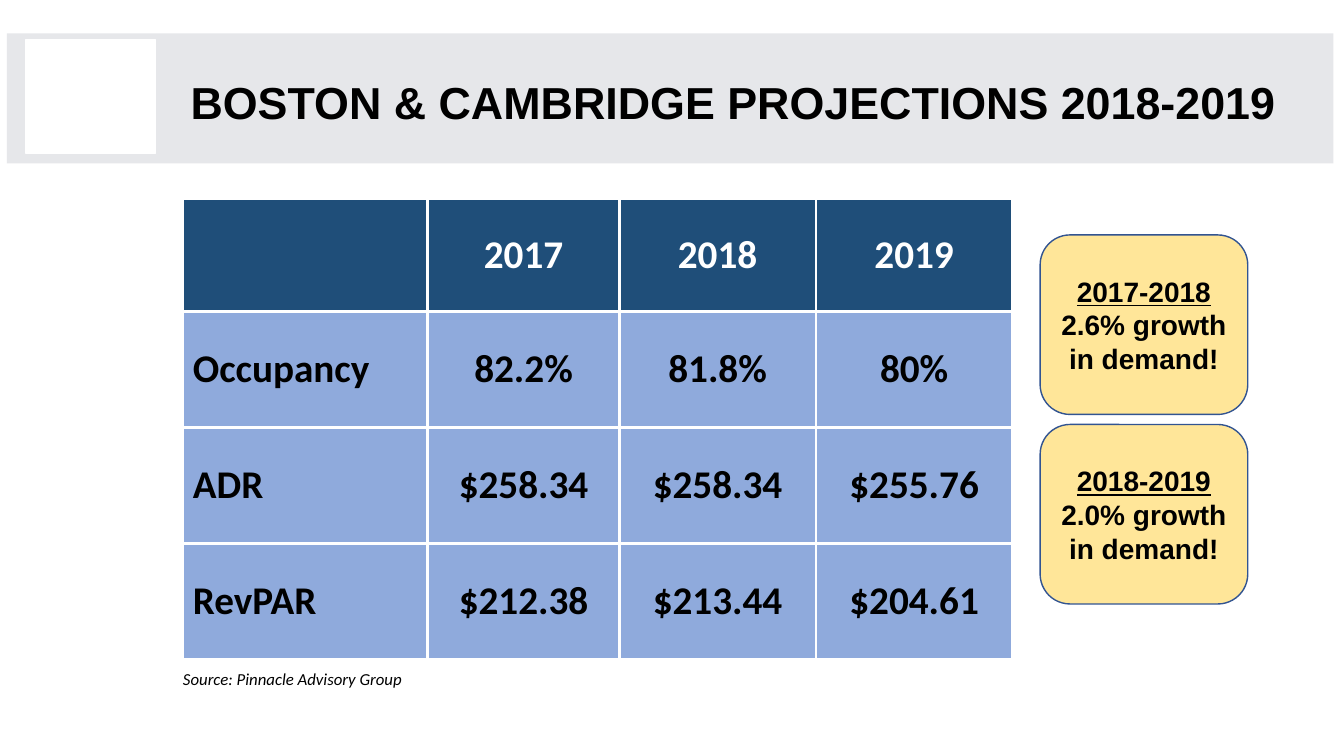
import pptx
import pptx.util
import pptx.dml.color
import pptx.enum.shapes
import pptx.enum.text
from lxml import etree

Pt = pptx.util.Pt
Shape = pptx.enum.shapes.MSO_SHAPE
Align = pptx.enum.text.PP_ALIGN
Anchor = pptx.enum.text.MSO_ANCHOR
NS = "http://schemas.openxmlformats.org/drawingml/2006/main"

TITLE = "BOSTON & CAMBRIDGE PROJECTIONS 2018-2019"
ROWS = [
    ("", "2017", "2018", "2019"),
    ("Occupancy", "82.2%", "81.8%", "80%"),
    ("ADR", "$258.34", "$258.34", "$255.76"),
    ("RevPAR", "$212.38", "$213.44", "$204.61"),
]
NOTES = [
    ("2017-2018", "2.6% growth in demand!"),
    ("2018-2019", "2.0% growth in demand!"),
]
SOURCE = "Source: Pinnacle Advisory Group"
WIDTHS = [175, 136.8, 140.4, 140.4]
HEIGHTS = [80.6, 82.8, 82.8, 82.8]


def color(code):
    return pptx.dml.color.RGBColor.from_string(code)


def style(para, size, name, code="000000", bold=True, align=Align.LEFT):
    para.alignment = align
    font = para.font
    font.size, font.name, font.bold = Pt(size), name, bold
    font.color.rgb = color(code)


def block(kind, box, fill, line=None):
    shape = slide.shapes.add_shape(kind, *map(Pt, box))
    shape.shadow.inherit = False
    shape.fill.solid()
    shape.fill.fore_color.rgb = color(fill)
    if line:
        shape.line.color.rgb = color(line)
        shape.line.width = Pt(1)
    else:
        shape.line.fill.background()
    return shape


def border(cell):
    props = cell._tc.get_or_add_tcPr()
    for spot, side in enumerate(("lnL", "lnR", "lnT", "lnB")):
        line = etree.Element(f"{{{NS}}}{side}", w=str(Pt(2.25)))
        fill = etree.SubElement(line, f"{{{NS}}}solidFill")
        etree.SubElement(fill, f"{{{NS}}}srgbClr", val="FFFFFF")
        props.insert(spot, line)


deck = pptx.Presentation()
deck.slide_width, deck.slide_height = Pt(960), Pt(540)
slide = deck.slides.add_slide(deck.slide_layouts[5])

block(Shape.RECTANGLE, (5, 23.8, 947.5, 92.9), "E6E7EA")
block(Shape.RECTANGLE, (18.7, 28.1, 92.2, 81.4), "FFFFFF", "FFFFFF")

title = slide.shapes.title
title.left, title.top, title.width, title.height = map(Pt, (128.9, 51.8, 817.2, 46.1))
title.element.getparent().append(title.element)
title.text_frame.text = TITLE
title.text_frame.vertical_anchor = Anchor.MIDDLE
title.text_frame.paragraphs[0].line_spacing = 0.9
style(title.text_frame.paragraphs[0], 32, "Arial")

table = slide.shapes.add_table(
    len(ROWS), len(WIDTHS), Pt(130.6), Pt(141.8), Pt(sum(WIDTHS)), Pt(sum(HEIGHTS))
).table
for column, width in zip(table.columns, WIDTHS):
    column.width = Pt(width)
for r, (row, height) in enumerate(zip(ROWS, HEIGHTS)):
    table.rows[r].height = Pt(height)
    for c, text in enumerate(row):
        cell = table.cell(r, c)
        cell.text = text
        cell.vertical_anchor = Anchor.MIDDLE
        cell.fill.solid()
        cell.fill.fore_color.rgb = color("8FAADC" if r else "1F4E79")
        border(cell)
        style(cell.text_frame.paragraphs[0], 28, "Calibri",
              "000000" if r else "FFFFFF", align=Align.CENTER if c else Align.LEFT)

for i, note in enumerate(NOTES):
    card = block(Shape.ROUNDED_RECTANGLE, (743, 167.8 + 135.4 * i, 148.3, 128.2),
                 "FFE699", "325491")
    frame = card.text_frame
    frame.word_wrap = True
    frame.vertical_anchor = Anchor.MIDDLE
    frame.text = "\n".join(note)
    for para in frame.paragraphs:
        style(para, 20, "Arial", align=Align.CENTER)
    frame.paragraphs[0].font.underline = True

credit = slide.shapes.add_textbox(Pt(123.6), Pt(474.5), Pt(375.8), Pt(21.6)).text_frame
credit.word_wrap = True
credit.text = SOURCE
style(credit.paragraphs[0], 12, "Calibri", bold=False)
credit.paragraphs[0].font.italic = True

deck.save("out.pptx")
